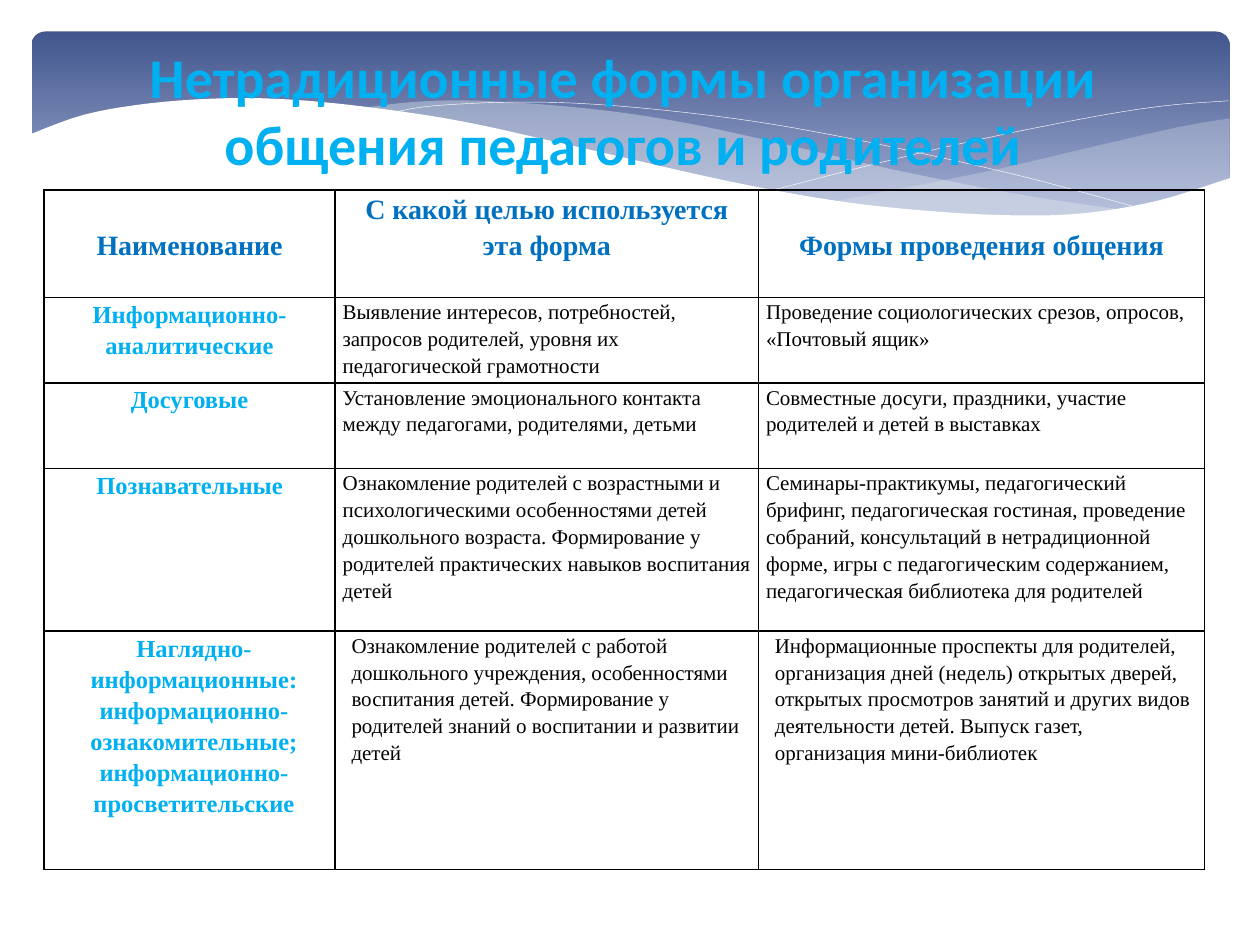
from dataclasses import dataclass

from lxml import etree
from pptx import Presentation
from pptx.dml.color import RGBColor
from pptx.enum.shapes import MSO_SHAPE
from pptx.enum.text import MSO_ANCHOR, PP_ALIGN
from pptx.oxml.ns import qn
from pptx.util import Inches, Pt

ROUND_RECT = MSO_SHAPE.ROUNDED_RECTANGLE
CENTER, LEFT = PP_ALIGN.CENTER, PP_ALIGN.LEFT
TOP, MIDDLE = MSO_ANCHOR.TOP, MSO_ANCHOR.MIDDLE


@dataclass(frozen=True)
class Theme:
    banner_top: str = "42568D"
    banner_bottom: str = "A0ADD2"
    wave: str = "E4E9EF"
    white: str = "FFFFFF"
    black: str = "000000"
    accent: str = "00B0F0"
    header: str = "0070C0"
    title_font: str = "Calibri"
    table_font: str = "Times New Roman"
    title_size: int = 32
    header_size: int = 16
    name_size: int = 14
    body_size: int = 12


THEME = Theme()

# Each wave is a list of edges; every edge is smoothed through its points.
RIGHT_WAVE = [
    [(9.76, 0.94), (9.35, 1.01), (8.61, 1.18), (7.79, 1.37), (6.61, 1.6)],
    [(6.61, 1.6), (7.32, 1.68), (8.03, 1.72), (8.63, 1.7), (9.21, 1.6), (9.76, 1.41)],
]
MIDDLE_WAVE = [
    [(8.93, 1.67), (8.07, 1.54), (7.06, 1.34), (6.29, 1.16), (5.41, 0.97),
     (4.65, 0.86), (3.8, 0.8), (3.28, 0.81), (2.86, 0.86)],
    [(2.86, 0.86), (3.62, 0.97), (4.49, 1.16), (5.66, 1.43), (6.5, 1.58),
     (7.22, 1.68), (7.96, 1.73), (8.48, 1.72), (8.93, 1.67)],
]
FRONT_WAVE = [
    [(9.77, 1.41), (9.2, 1.59), (8.63, 1.69), (8.09, 1.71), (7.44, 1.68),
     (6.68, 1.6), (5.79, 1.44), (4.47, 1.14), (3.65, 0.96), (2.92, 0.85),
     (2.3, 0.79), (1.77, 0.78), (1.19, 0.82), (0.67, 0.91), (0.23, 1.07)],
    [(0.23, 2.24), (9.77, 2.24)],
]
FALLING_LINE = [(3.09, 0.9), (3.44, 0.84), (4.16, 0.81), (4.89, 0.84), (5.82, 0.94),
                (6.65, 1.08), (7.6, 1.28), (8.31, 1.45), (9.07, 1.66)]
RISING_LINE = [(6.13, 1.51), (6.95, 1.3), (7.76, 1.11), (8.66, 0.93), (9.24, 0.84), (9.75, 0.8)]

COLUMN_WIDTHS = [2.31, 3.36, 3.54]
ROW_HEIGHTS = [0.85, 0.68, 0.68, 1.29, 1.89]
HEADERS = [
    ("Наименование", MIDDLE),
    ("С какой целью используется эта форма", TOP),
    ("Формы проведения общения", MIDDLE),
]
FORMS = [
    ("Информационно-аналитические",
     "Выявление интересов, потребностей, запросов родителей, уровня их педагогической грамотности",
     "Проведение социологических срезов, опросов, «Почтовый ящик»"),
    ("Досуговые",
     "Установление эмоционального контакта между педагогами, родителями, детьми",
     "Совместные досуги, праздники, участие родителей и детей в выставках"),
    ("Познавательные",
     "Ознакомление родителей с возрастными и психологическими особенностями детей дошкольного "
     "возраста. Формирование у родителей практических навыков воспитания детей",
     "Семинары-практикумы, педагогический брифинг, педагогическая гостиная, проведение собраний, "
     "консультаций в нетрадиционной форме, игры с педагогическим содержанием, педагогическая "
     "библиотека для родителей"),
    ("Наглядно-информационные: информационно-ознакомительные; информационно-просветительские",
     "Ознакомление родителей с работой дошкольного учреждения, особенностями воспитания детей. "
     "Формирование у родителей знаний о воспитании и развитии детей",
     "Информационные проспекты для родителей, организация дней (недель) открытых дверей, открытых "
     "просмотров занятий и других видов деятельности детей. Выпуск газет, организация мини-библиотек"),
]


def rgb(color):
    return RGBColor.from_string(color)


def smooth(points, steps=5):
    """Sample a Catmull-Rom curve that passes through the points."""
    if len(points) < 3:
        return points
    padded = [points[0], *points, points[-1]]
    curve = [points[0]]
    for a, b, c, d in zip(padded, padded[1:], padded[2:], padded[3:]):
        for i in range(1, steps + 1):
            t = i / steps
            curve.append(tuple(
                0.5 * (2 * q + (r - p) * t + (2 * p - 5 * q + 4 * r - s) * t ** 2
                       + (3 * q - p - 3 * r + s) * t ** 3)
                for p, q, r, s in zip(a, b, c, d)))
    return curve


class SlideBuilder:
    def __init__(self, slide, theme):
        self.slide = slide
        self.theme = theme

    def banner(self, x, y, w, h):
        sp = self.slide.shapes.add_shape(ROUND_RECT, Inches(x), Inches(y), Inches(w), Inches(h))
        sp.adjustments[0] = 0.07
        sp.shadow.inherit = False
        sp.line.fill.background()
        sp.fill.gradient()
        sp.fill.gradient_angle = 270
        colors = (self.theme.banner_top, self.theme.banner_bottom)
        for stop, color, position in zip(sp.fill.gradient_stops, colors, (0, 0.9)):
            stop.color.rgb = rgb(color)
            stop.position = position

    def outline(self, points, close):
        vertices = [(Inches(x), Inches(y)) for x, y in points]
        builder = self.slide.shapes.build_freeform(*vertices[0])
        builder.add_line_segments(vertices[1:], close=close)
        sp = builder.convert_to_shape()
        sp.shadow.inherit = False
        return sp

    def wave(self, edges, color, opacity=100):
        sp = self.outline([pt for edge in edges for pt in smooth(edge)], close=True)
        sp.line.fill.background()
        sp.fill.solid()
        sp.fill.fore_color.rgb = rgb(color)
        if opacity < 100:
            clr = sp._element.spPr.find(qn("a:solidFill"))[0]
            etree.SubElement(clr, qn("a:alpha"), val=str(opacity * 1000))

    def curve(self, points):
        sp = self.outline(smooth(points), close=False)
        sp.fill.background()
        sp.line.color.rgb = rgb(self.theme.white)
        sp.line.width = Pt(0.25)

    def format_text(self, p, font, size, color, bold, align):
        p.alignment = align
        for r in p.runs:
            r.font.name, r.font.size, r.font.bold = font, Pt(size), bold
            r.font.color.rgb = rgb(color)

    def title(self, text, x, y, w, h):
        tf = self.slide.shapes.add_textbox(Inches(x), Inches(y), Inches(w), Inches(h)).text_frame
        tf.word_wrap = True
        tf.text = text
        t = self.theme
        self.format_text(tf.paragraphs[0], t.title_font, t.title_size, t.accent, True, CENTER)

    def borders(self, cell):
        tc_pr = cell._tc.get_or_add_tcPr()
        for side in ("lnL", "lnR", "lnT", "lnB"):
            ln = etree.SubElement(tc_pr, qn(f"a:{side}"), w=str(Pt(1)))
            fill = etree.SubElement(ln, qn("a:solidFill"))
            etree.SubElement(fill, qn("a:srgbClr"), val=self.theme.black)

    def cell(self, cell, text, size, color, bold, align, anchor=TOP):
        self.borders(cell)
        cell.fill.background()
        cell.margin_left = cell.margin_right = Inches(0.06)
        cell.margin_top = cell.margin_bottom = 0
        cell.vertical_anchor = anchor
        cell.text = text
        p = cell.text_frame.paragraphs[0]
        p.line_spacing = 1.15
        self.format_text(p, self.theme.table_font, size, color, bold, align)
        return p

    def table(self, x, y):
        t = self.theme
        table = self.slide.shapes.add_table(
            len(ROW_HEIGHTS), len(COLUMN_WIDTHS), Inches(x), Inches(y),
            Inches(sum(COLUMN_WIDTHS)), Inches(sum(ROW_HEIGHTS))).table
        table.first_row = table.horz_banding = False
        for column, width in zip(table.columns, COLUMN_WIDTHS):
            column.width = Inches(width)
        for row, height in zip(table.rows, ROW_HEIGHTS):
            row.height = Inches(height)
        for j, (text, anchor) in enumerate(HEADERS):
            self.cell(table.cell(0, j), text, t.header_size, t.header, True, CENTER, anchor)
        name_style = (t.name_size, t.accent, True, CENTER)
        body_style = (t.body_size, t.black, False, LEFT)
        for i, form in enumerate(FORMS, 1):
            for j, text in enumerate(form):
                p = self.cell(table.cell(i, j), text, *(body_style if j else name_style))
                if i == len(FORMS):
                    p._p.get_or_add_pPr().set("marL", str(Inches(0.07)))


def main():
    prs = Presentation()
    prs.slide_width, prs.slide_height = Inches(10), Inches(7.5)
    s = SlideBuilder(prs.slides.add_slide(prs.slide_layouts[6]), THEME)
    s.banner(0.25, 0.25, 9.51, 1.56)
    s.wave(RIGHT_WAVE, THEME.wave, 29)
    s.wave(MIDDLE_WAVE, THEME.wave, 40)
    s.curve(FALLING_LINE)
    s.curve(RISING_LINE)
    s.wave(FRONT_WAVE, THEME.white)
    s.table(0.35, 1.51)
    s.title("Нетрадиционные формы организации общения педагогов и родителей", 0.89, 0.29, 8.11, 1.18)
    prs.save("out.pptx")


if __name__ == "__main__":
    main()
